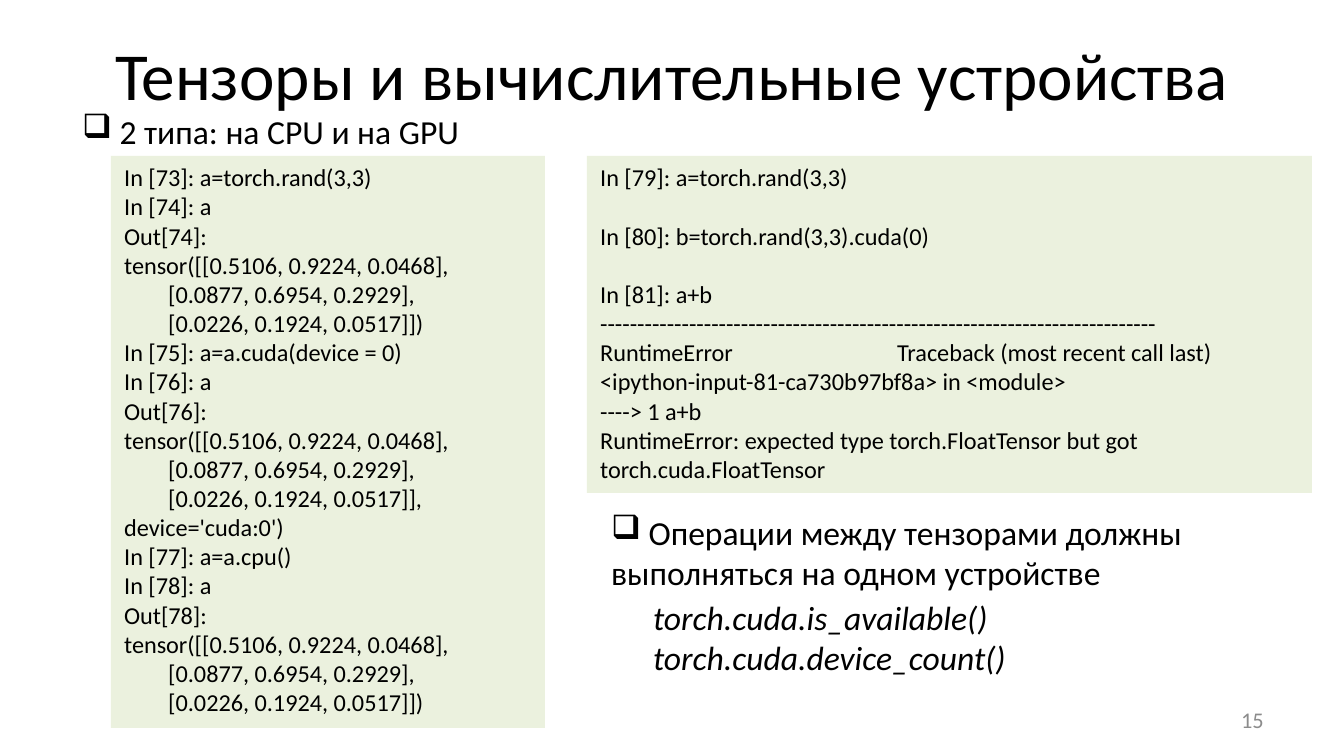
import pptx
import pptx.util
import pptx.dml.color
import pptx.enum.shapes
import pptx.enum.text
import pptx.oxml
import pptx.oxml.ns

EMU_PER_PX = 914400 / 134.4
ALIGN = pptx.enum.text.PP_ALIGN
ANCHOR = pptx.enum.text.MSO_ANCHOR
BLACK, GREY, PALE_GREEN = "000000", "8C8C8C", "EBF1DE"
ROW_INDENT, TRACEBACK_TAB = 44, 297
BLANK_LINE = 15.6

TITLE = ["Тензоры и вычислительные устройства"]
DEVICE_TYPES = [" 2 типа: на CPU и на GPU"]
SAME_DEVICE = [" Операции между тензорами должны выполняться на одном устройстве"]
CHECKS = ["torch.cuda.is_available()", "torch.cuda.device_count()"]
NUMBER = ["15"]

MATRIX = [
    "tensor([[0.5106, 0.9224, 0.0468],",
    "[0.0877, 0.6954, 0.2929],",
    "[0.0226, 0.1924, 0.0517]]",
]


def tensor_output(ending):
    return MATRIX[:-1] + [MATRIX[-1] + ending]


TRANSFER = [
    "In [73]: a=torch.rand(3,3)", "In [74]: a", "Out[74]:",
    *tensor_output(")"),
    "In [75]: a=a.cuda(device = 0)", "In [76]: a", "Out[76]:",
    *tensor_output(", device='cuda:0')"),
    "In [77]: a=a.cpu()", "In [78]: a", "Out[78]:",
    *tensor_output(")"),
]
MISMATCH = [
    "In [79]: a=torch.rand(3,3)",
    "In [80]: b=torch.rand(3,3).cuda(0)",
    "In [81]: a+b",
    "-" * 75,
    "RuntimeError\tTraceback (most recent call last)",
    "<ipython-input-81-ca730b97bf8a> in <module>",
    "----> 1 a+b",
    "RuntimeError: expected type torch.FloatTensor but got torch.cuda.FloatTensor",
]
SPACED_INPUTS = MISMATCH[1:3]


def px(length):
    return pptx.util.Emu(round(length * EMU_PER_PX))


def color(value):
    return pptx.dml.color.RGBColor.from_string(value)


def add_xml(paragraph, body):
    namespace = pptx.oxml.ns.nsdecls("a")
    tag, rest = body.split(" ", 1)
    paragraph._p.get_or_add_pPr().append(
        pptx.oxml.parse_xml(f"<a:{tag} {namespace} {rest}"))


def write(shape, lines, size, ink=BLACK, align=ALIGN.LEFT, anchor=ANCHOR.TOP,
          italic=False, wrap=True):
    frame = shape.text_frame
    frame.text = "\n".join(lines)
    frame.word_wrap = wrap
    frame.vertical_anchor = anchor
    for paragraph in frame.paragraphs:
        paragraph.alignment = align
        font = paragraph.runs[0].font
        font.name = "Calibri"
        font.size = pptx.util.Pt(size)
        font.italic = italic
        font.color.rgb = color(ink)
    return frame.paragraphs


def add_text(slide, box, lines, size, bullet=False, **style):
    shape = slide.shapes.add_textbox(*map(px, box))
    for paragraph in write(shape, lines, size, **style):
        if bullet:
            add_xml(paragraph, 'buChar char="❑"/>')


def add_code(slide, box, lines):
    panel = slide.shapes.add_shape(
        pptx.enum.shapes.MSO_SHAPE.RECTANGLE, *map(px, box))
    panel.shadow.inherit = False
    panel.fill.solid()
    panel.fill.fore_color.rgb = color(PALE_GREEN)
    panel.line.fill.background()
    for line, paragraph in zip(lines, write(panel, lines, 13)):
        if line.startswith("["):
            properties = paragraph._p.get_or_add_pPr()
            properties.set("marL", "0")
            properties.set("indent", str(px(ROW_INDENT)))
        if line in SPACED_INPUTS:
            paragraph.space_before = pptx.util.Pt(BLANK_LINE)
        if "\t" in line:
            add_xml(paragraph, f'tabLst ><a:tab pos="{px(TRACEBACK_TAB)}" algn="l"/></a:tabLst>')


def main():
    deck = pptx.Presentation()
    deck.slide_width, deck.slide_height = px(1344), px(756)
    slide = deck.slides.add_slide(deck.slide_layouts[6])

    add_text(slide, (67, 11, 1210, 126), TITLE, 36,
             align=ALIGN.CENTER, anchor=ANCHOR.MIDDLE)
    add_text(slide, (69, 104, 409, 54), DEVICE_TYPES, 18, bullet=True, wrap=False)
    add_code(slide, (111, 156, 434, 572), TRANSFER)
    add_code(slide, (587, 156, 725, 337), MISMATCH)
    add_text(slide, (598, 505, 699, 95), SAME_DEVICE, 18, bullet=True)
    add_text(slide, (640, 590, 465, 95), CHECKS, 18, italic=True)
    add_text(slide, (964, 700, 313, 40), NUMBER, 12, ink=GREY,
             align=ALIGN.RIGHT, anchor=ANCHOR.MIDDLE)

    deck.save("out.pptx")


if __name__ == "__main__":
    main()
